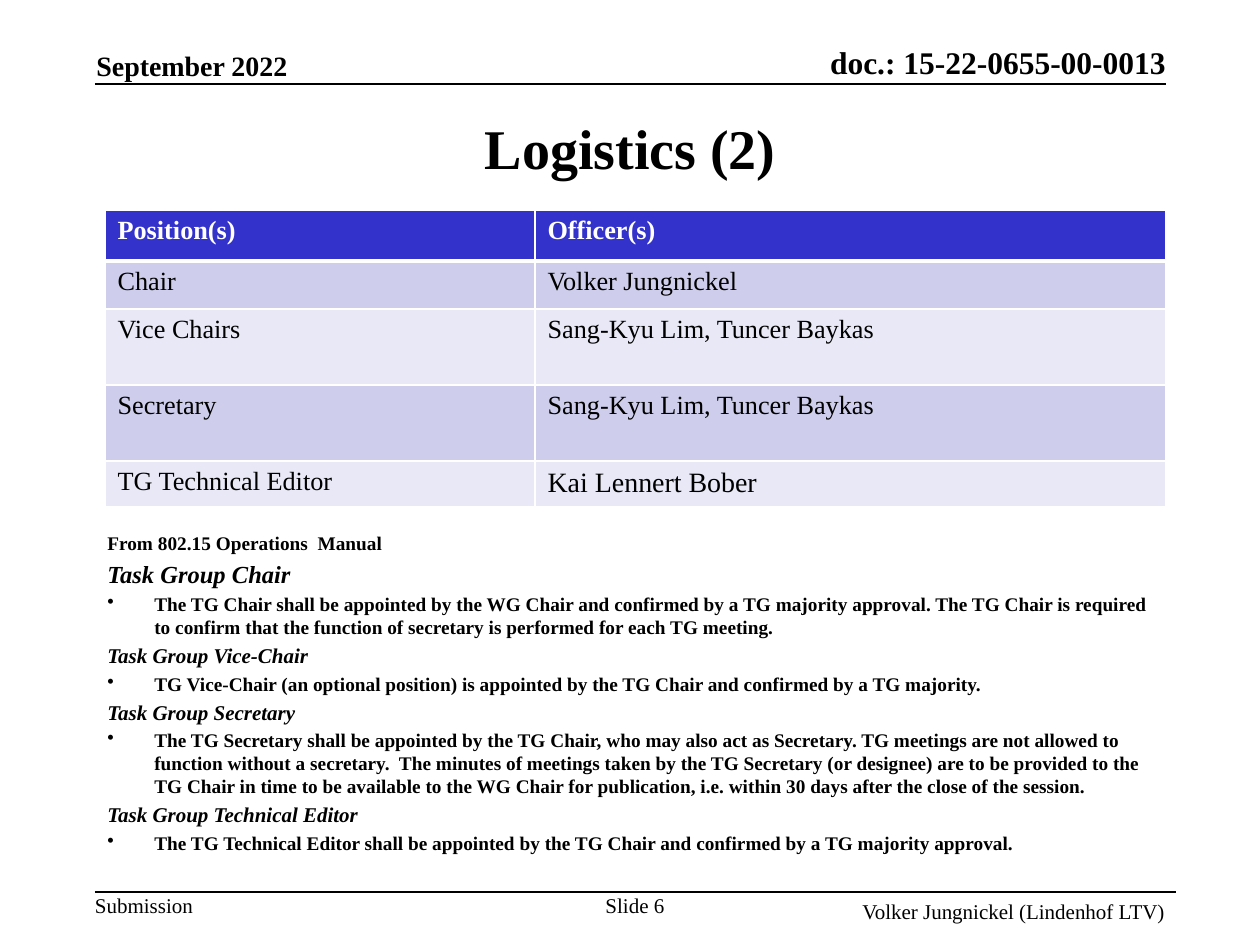
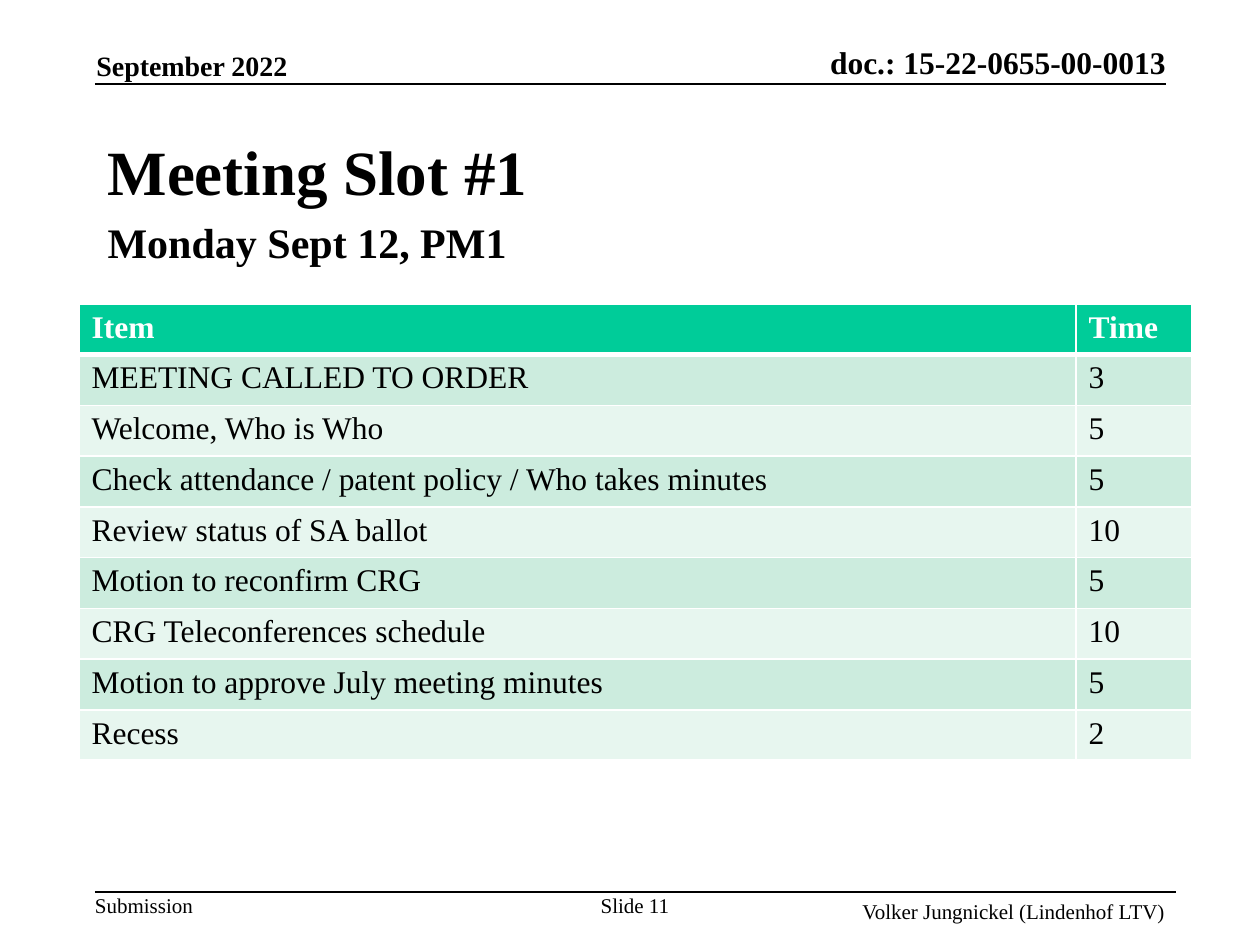
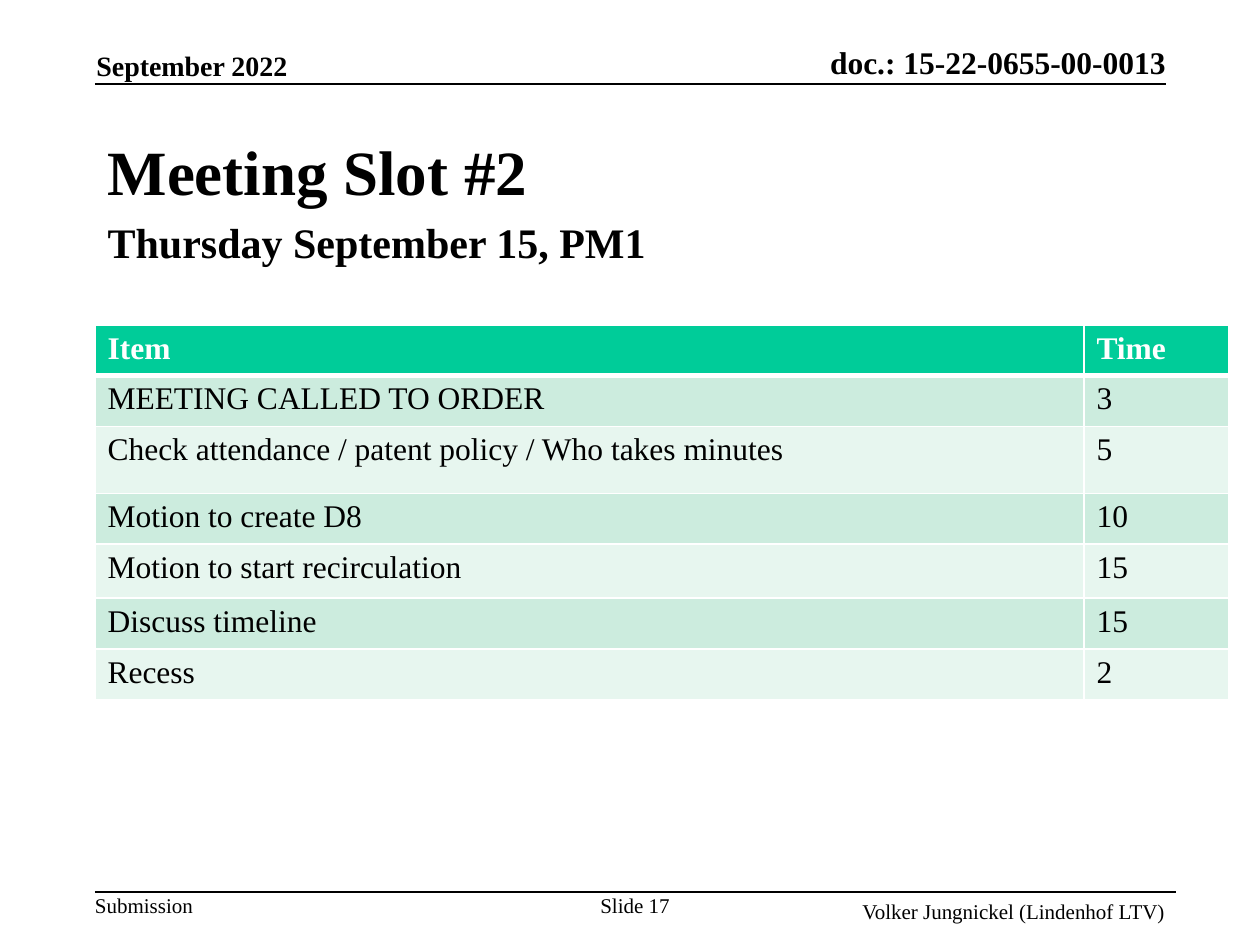
from lxml.etree import SubElement
from pptx import Presentation
from pptx.dml.color import RGBColor
from pptx.enum.shapes import MSO_CONNECTOR
from pptx.enum.text import MSO_ANCHOR, MSO_AUTO_SIZE, PP_ALIGN
from pptx.oxml import parse_xml
from pptx.oxml.ns import nsdecls, qn
from pptx.util import Pt

PX = 914400 / 126
FONT = "Times New Roman"
BLACK = RGBColor(0x00, 0x00, 0x00)
WHITE = RGBColor(0xFF, 0xFF, 0xFF)
# header, odd rows, even rows
BLUE_BANDS = (RGBColor(0x33, 0x33, 0xCC), RGBColor(0xCE, 0xCE, 0xEC), RGBColor(0xE8, 0xE8, 0xF6))
GREEN_BANDS = (RGBColor(0x00, 0xCC, 0x99), RGBColor(0xCC, 0xEC, 0xDE), RGBColor(0xE7, 0xF6, 0xEF))

LEFT, CENTER, RIGHT = PP_ALIGN.LEFT, PP_ALIGN.CENTER, PP_ALIGN.RIGHT
TOP, MIDDLE, BOTTOM = MSO_ANCHOR.TOP, MSO_ANCHOR.MIDDLE, MSO_ANCHOR.BOTTOM

# left, top, width, height, inset, anchor, align, size, bold, text
BAND_TEXTS = [
    (762, 43, 404, 38, 0, BOTTOM, RIGHT, 18, True, "doc.: 15-22-0655-00-0013"),
    (84, 42, 262, 81, 1, TOP, LEFT, 16, True, "September 2022"),
    (95, 893, 110, 25, 0, TOP, LEFT, 12, False, "Submission"),
    (598, 893, 74, 25, 0, TOP, CENTER, 12, False, "Slide {number}"),
    (850, 892, 358, 32, 1, TOP, LEFT, 12, False, "Volker Jungnickel (Lindenhof LTV)"),
]
RULES = [(95, 1166, 84), (95, 1176, 892)]

DUTIES = [
    ("Task Group Chair", 14,
     "The TG Chair shall be appointed by the WG Chair and confirmed by a TG majority approval. "
     "The TG Chair is required to confirm that the function of secretary is performed for each TG meeting."),
    ("Task Group Vice-Chair", 12,
     "TG Vice-Chair (an optional position) is appointed by the TG Chair and confirmed by a TG majority."),
    ("Task Group Secretary", 12,
     "The TG Secretary shall be appointed by the TG Chair, who may also act as Secretary. "
     "TG meetings are not allowed to function without a secretary.  The minutes of meetings taken "
     "by the TG Secretary (or designee) are to be provided to the TG Chair in time to be available "
     "to the WG Chair for publication, i.e. within 30 days after the close of the session."),
    ("Task Group Technical Editor", 12,
     "The TG Technical Editor shall be appointed by the TG Chair and confirmed by a TG majority approval."),
]

SLIDES = [
    dict(
        number=6, title=[("Logistics (2)", 32)], title_box=(95, 74, 1071, 147),
        title_anchor=MIDDLE, title_align=CENTER, duties=DUTIES,
        bands=BLUE_BANDS, size=15, last_size=16, corner=(105, 210),
        columns=[430, 631], heights=[51, 48, 76, 76, 45],
        rows=[
            ("Position(s)", "Officer(s)"),
            ("Chair", "Volker Jungnickel"),
            ("Vice Chairs", "Sang-Kyu Lim, Tuncer Baykas"),
            ("Secretary", "Sang-Kyu Lim, Tuncer Baykas"),
            ("TG Technical Editor", "Kai Lennert Bober"),
        ],
    ),
    dict(
        number=11, title=[("Meeting Slot #1", 36), ("Monday Sept 12, PM1", 24)],
        title_box=(95, 126, 1071, 231), title_anchor=TOP, title_align=LEFT, duties=[],
        bands=GREEN_BANDS, size=18, last_size=18, corner=(79, 304),
        columns=[997, 116], heights=[50, 51] * 4 + [50],
        rows=[
            ("Item", "Time"),
            ("MEETING CALLED TO ORDER", "3"),
            ("Welcome, Who is Who", "5"),
            ("Check attendance / patent policy / Who takes minutes", "5"),
            ("Review status of SA ballot", "10"),
            ("Motion to reconfirm CRG", "5"),
            ("CRG Teleconferences schedule", "10"),
            ("Motion to approve July meeting minutes", "5"),
            ("Recess", "2"),
        ],
    ),
    dict(
        number=17, title=[("Meeting Slot #2", 36), ("Thursday September 15, PM1", 24)],
        title_box=(95, 126, 1071, 231), title_anchor=TOP, title_align=LEFT, duties=[],
        bands=GREEN_BANDS, size=18, last_size=18, corner=(95, 325),
        columns=[989, 145], heights=[50, 51, 67, 50, 54, 51, 50],
        rows=[
            ("Item", "Time"),
            ("MEETING CALLED TO ORDER", "3"),
            ("Check attendance / patent policy / Who takes minutes", "5"),
            ("Motion to create D8", "10"),
            ("Motion to start recirculation", "15"),
            ("Discuss timeline", "15"),
            ("Recess", "2"),
        ],
    ),
]


def px(*lengths):
    return [round(length * PX) for length in lengths]


def write(frame, text, size, bold=False, italic=False, color=BLACK, align=LEFT, spaced=False, bullet=False):
    """Fill the empty first paragraph of the frame, or add one, with a single run."""
    paragraph = frame.paragraphs[0]
    if paragraph.runs:
        paragraph = frame.add_paragraph()
    paragraph.alignment = align
    run = paragraph.add_run()
    run.text = text
    run.font.name, run.font.size = FONT, Pt(size)
    run.font.bold, run.font.italic = bold, italic
    run.font.color.rgb = color
    properties = paragraph._p.get_or_add_pPr()
    if spaced:
        SubElement(SubElement(properties, qn("a:spcBef")), qn("a:spcPct")).set("val", "20000")
    if bullet:
        hang = px(47)[0]
        properties.set("marL", str(hang))
        properties.set("indent", str(-hang))
        SubElement(properties, qn("a:buChar")).set("char", "•")


prs = Presentation()
prs.slide_width, prs.slide_height = px(1260, 945)

for page in SLIDES:
    slide = prs.slides.add_slide(prs.slide_layouts[5])

    for left, top, width, height, inset, anchor, align, size, bold, text in BAND_TEXTS:
        frame = slide.shapes.add_textbox(*px(left, top, width, height)).text_frame
        frame.word_wrap = True
        frame.vertical_anchor = anchor
        if not inset:
            frame.margin_left = frame.margin_right = frame.margin_top = frame.margin_bottom = 0
        write(frame, text.format(number=page["number"]), size, bold, align=align)

    for start, end, y in RULES:
        rule = slide.shapes.add_connector(MSO_CONNECTOR.STRAIGHT, *px(start, y, end, y))
        rule.line.color.rgb = BLACK
        rule.line.width = Pt(1)
        SubElement(rule._element.spPr, qn("a:effectLst"))

    title = slide.shapes.title
    title.left, title.top, title.width, title.height = px(*page["title_box"])
    title.text_frame.auto_size = MSO_AUTO_SIZE.NONE
    title.text_frame.vertical_anchor = page["title_anchor"]
    for text, size in page["title"]:
        write(title.text_frame, text, size, True, align=page["title_align"],
              spaced=len(page["title"]) > 1)

    rows, columns, heights = page["rows"], page["columns"], page["heights"]
    table = slide.shapes.add_table(
        len(rows), len(columns), *px(*page["corner"], sum(columns), sum(heights))).table
    table.horz_banding = False
    for column, width in zip(table.columns, px(*columns)):
        column.width = width
    for row, height in zip(table.rows, px(*heights)):
        row.height = height
    header_color, odd_color, even_color = page["bands"]
    for r, texts in enumerate(rows):
        for c, text in enumerate(texts):
            cell = table.cell(r, c)
            last = r == len(rows) - 1 and c == len(texts) - 1
            write(cell.text_frame, text, page["last_size"] if last else page["size"],
                  bold=r == 0, color=BLACK if r else WHITE)
            thick_side = {0: "lnB", 1: "lnT"}.get(r)
            for side in ("lnL", "lnR", "lnT", "lnB"):
                weight = Pt(3 if side == thick_side else 1)
                cell._tc.get_or_add_tcPr().append(parse_xml(
                    f'<a:{side} {nsdecls("a")} w="{weight}"><a:solidFill>'
                    f'<a:srgbClr val="{WHITE}"/></a:solidFill></a:{side}>'))
            cell.fill.solid()
            cell.fill.fore_color.rgb = header_color if r == 0 else odd_color if r % 2 else even_color

    if page["duties"]:
        manual = slide.shapes.add_textbox(*px(95, 525, 1071, 305)).text_frame
        manual.word_wrap = True
        write(manual, "From 802.15 Operations  Manual", 11, True, spaced=True)
        for role, role_size, duty in page["duties"]:
            write(manual, role, role_size, True, italic=True, spaced=True)
            write(manual, duty, 11, True, spaced=True, bullet=True)

prs.save("out.pptx")
